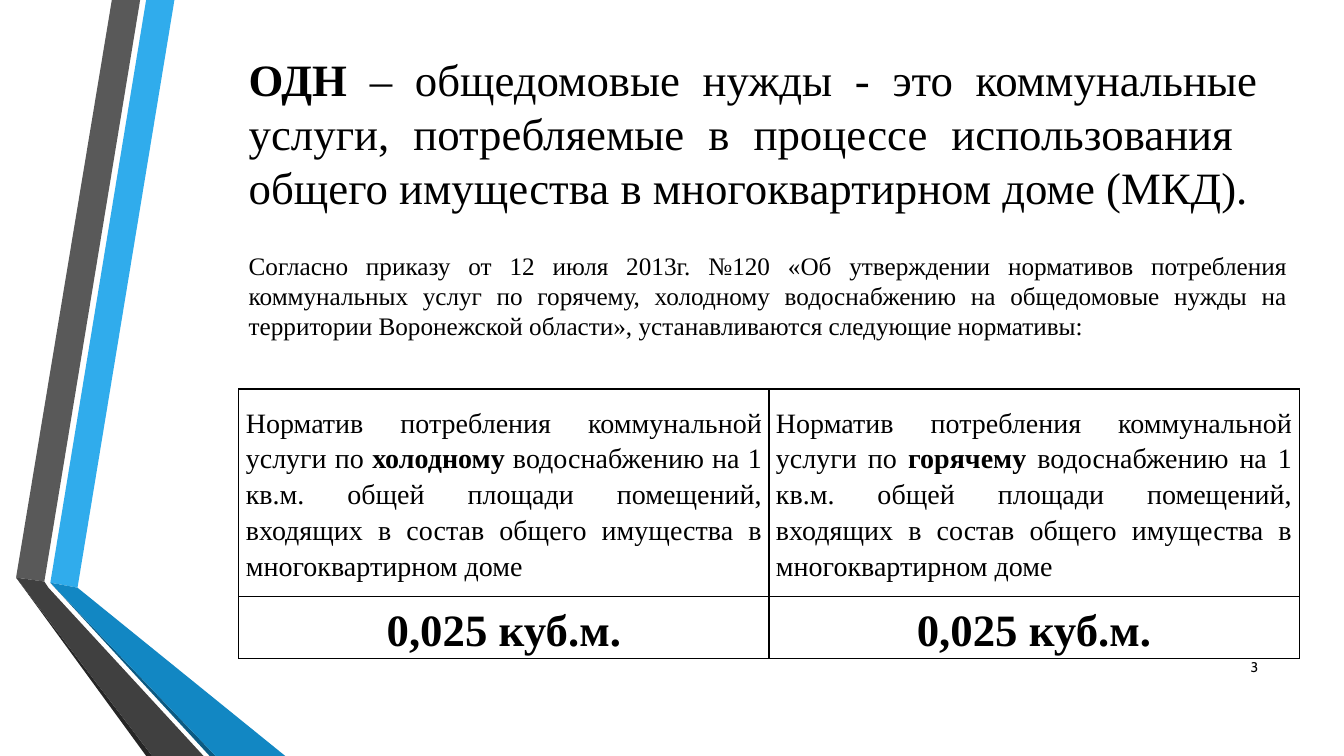
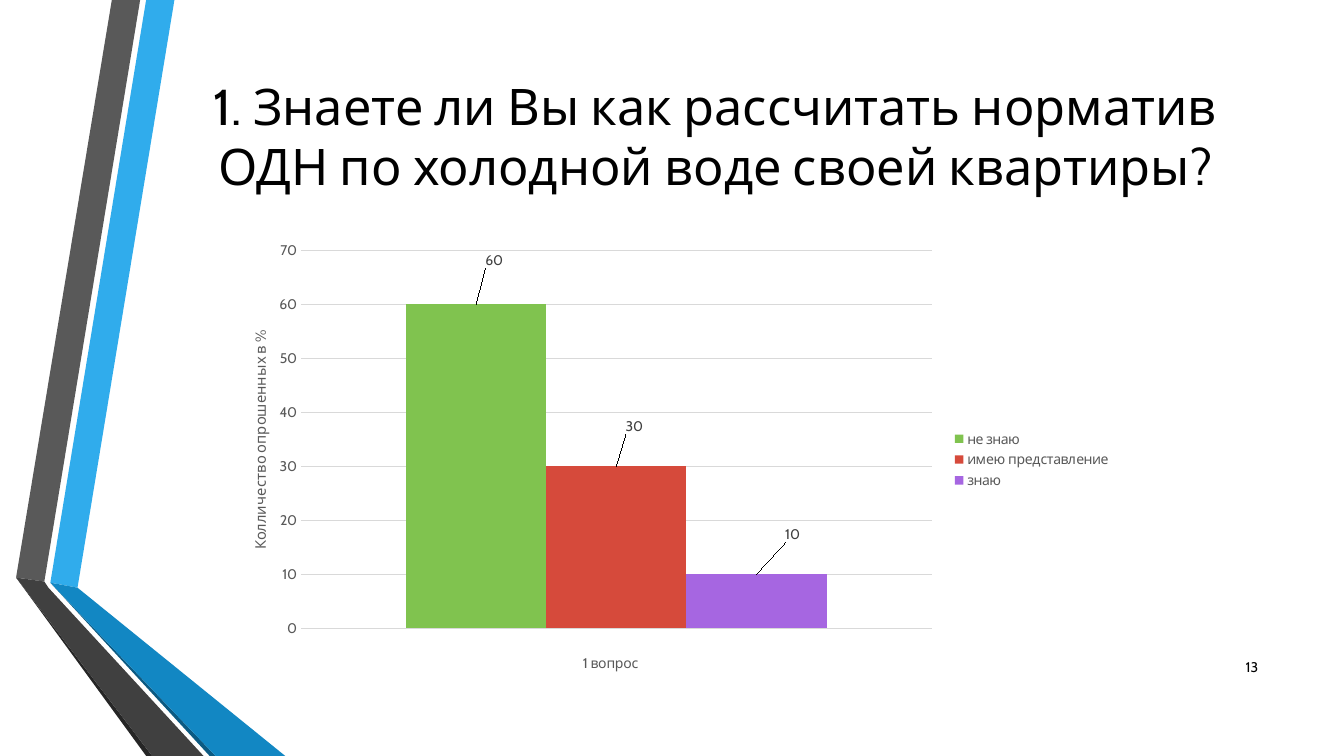
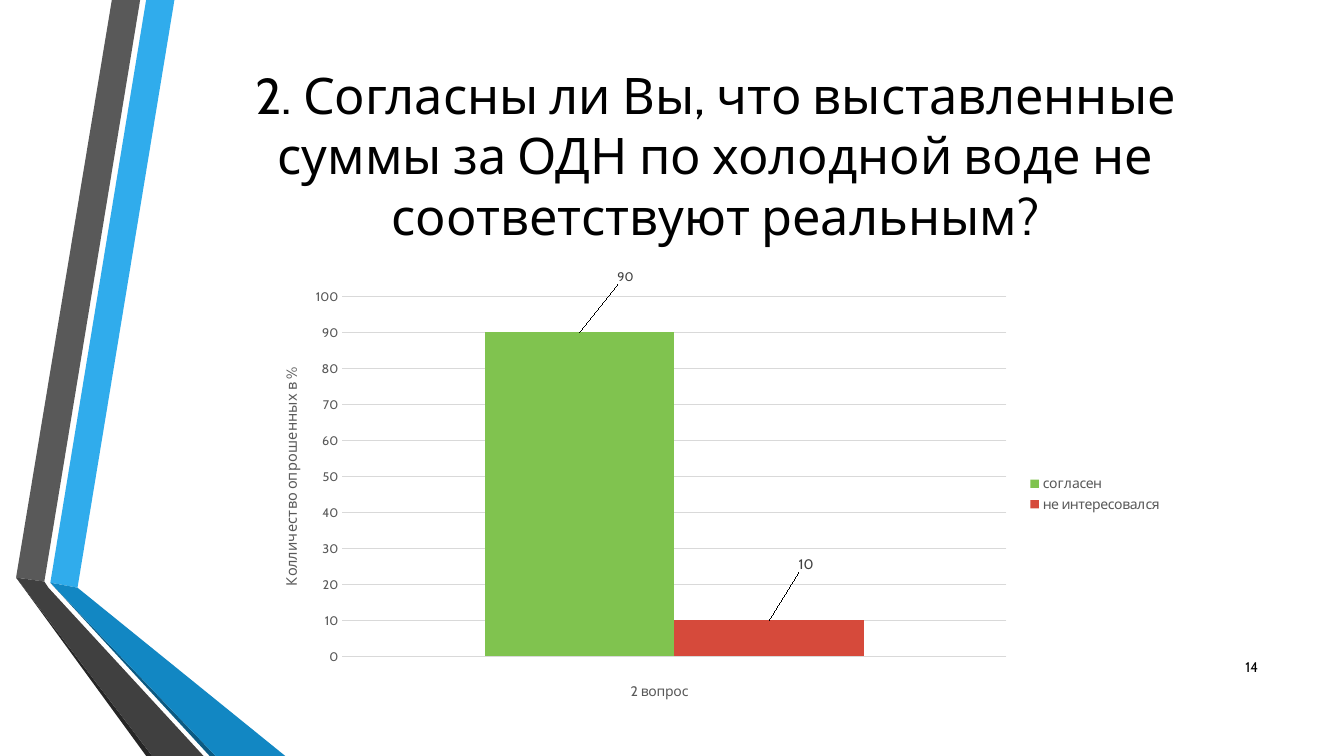
from dataclasses import dataclass

from lxml.etree import SubElement
from pptx import Presentation
from pptx.chart.data import CategoryChartData
from pptx.dml.color import RGBColor
from pptx.enum.chart import (XL_CHART_TYPE, XL_LABEL_POSITION,
                             XL_LEGEND_POSITION, XL_TICK_MARK)
from pptx.enum.text import MSO_ANCHOR, MSO_AUTO_SIZE, PP_ALIGN
from pptx.oxml import parse_xml
from pptx.oxml.ns import nsdecls, qn
from pptx.util import Pt


@dataclass(frozen=True)
class Theme:
    # Colours
    text: str = "000000"
    muted: str = "595959"
    label: str = "404040"
    grid: str = "D9D9D9"
    series: tuple = ("80C34F", "D64A3B", "A666E1")
    sky: str = "30ACEC"
    blue: str = "1287C3"
    navy: str = "0C5A82"
    grey: str = "595959"
    charcoal: str = "404040"
    black: str = "262626"
    # Fonts and type sizes
    sans: str = "Cabin"
    serif: str = "Times New Roman"
    title: float = 36
    lead: float = 32
    cell: float = 20
    body: float = 18
    axis_title: float = 10.5
    small: float = 10


T = Theme()
WIDTH, HEIGHT = 960, 540
TITLE_ONLY, BLANK = 5, 6


def rgb(value):
    return RGBColor.from_string(value)


def style(font, size, color=T.text, name=T.sans, bold=False):
    font.size, font.name, font.bold = Pt(size), name, bold
    font.color.rgb = rgb(color)


def write(tf, *runs, size, color=T.text, name=T.sans, align=PP_ALIGN.LEFT, spacing=None):
    """Fill one paragraph; a run is a string, or (string,) for bold."""
    p = tf.paragraphs[0]
    p.alignment = align
    if spacing is not None:
        p.line_spacing = spacing
    for run in runs:
        bold = isinstance(run, tuple)
        r = p.add_run()
        r.text = run[0] if bold else run
        style(r.font, size, color, name, bold)


def add_text(s, box, *runs, anchor=MSO_ANCHOR.TOP, **fmt):
    tf = s.shapes.add_textbox(*map(Pt, box)).text_frame
    tf.word_wrap = True
    tf.vertical_anchor = anchor
    write(tf, *runs, **fmt)


# Ribbons shared by all slides
def add_ribbons(prs, s):
    grey_fold, grey_edge = (11.5, 412.6), (31.7, 415.4)
    blue_fold, blue_edge = (36, 416.2), (55.4, 419.8)
    grey_foot, blue_foot = (108.7, HEIGHT), (154.1, HEIGHT)
    ribbons = [
        (T.sky, [blue_fold, blue_edge, (124.6, 0), (104.4, 0)]),
        (T.grey, [(100.1, 0), (79.9, 0), grey_fold, grey_edge]),
        (T.black, [grey_fold, (104.4, HEIGHT), grey_foot]),
        (T.navy, [blue_fold, (149.8, HEIGHT), blue_foot]),
        (T.blue, [blue_fold, blue_foot, (203.8, HEIGHT), blue_edge]),
        (T.charcoal, [(145.4, HEIGHT), (34.6, 419.8), grey_edge, grey_fold, grey_foot]),
    ]
    master_tree = prs.slide_master.shapes.element
    for i, (color, points) in enumerate(ribbons):
        start, *rest = [(Pt(x), Pt(y)) for x, y in points]
        builder = s.shapes.build_freeform(*start)
        builder.add_line_segments(rest, close=True)
        sp = builder.convert_to_shape()
        sp.shadow.inherit = False
        sp.fill.solid()
        sp.fill.fore_color.rgb = rgb(color)
        sp.line.fill.background()
        # Move to the master, behind its placeholders
        master_tree.insert(2 + i, sp.element)


def add_number(s, number):
    add_text(s, (862.6, 462.2, 43.2, 28.8), str(number), size=T.small,
             align=PP_ALIGN.RIGHT, anchor=MSO_ANCHOR.MIDDLE)


def add_title(s, box, text):
    sp = s.shapes.title
    sp.left, sp.top, sp.width, sp.height = map(Pt, box)
    tf = sp.text_frame
    tf.word_wrap = True
    tf.auto_size = MSO_AUTO_SIZE.NONE
    tf.vertical_anchor = MSO_ANCHOR.MIDDLE
    write(tf, text, size=T.title, align=PP_ALIGN.CENTER)


# Table
def add_borders(cell):
    tcPr = cell._tc.get_or_add_tcPr()
    for i, side in enumerate(("lnL", "lnR", "lnT", "lnB")):
        ln = parse_xml(
            f'<a:{side} {nsdecls("a")} w="{Pt(1)}"><a:solidFill>'
            f'<a:srgbClr val="{T.text}"/></a:solidFill></a:{side}>')
        tcPr.insert(i, ln)


def add_norms_table(s, box, row_heights, rows):
    table = s.shapes.add_table(len(rows), len(rows[0]), *map(Pt, box)).table
    table.first_row = table.horz_banding = False
    formats = [dict(size=T.cell, align=PP_ALIGN.JUSTIFY),
               dict(size=T.lead, align=PP_ALIGN.CENTER)]
    for i, (height, row, fmt) in enumerate(zip(row_heights, rows, formats)):
        table.rows[i].height = Pt(height)
        for j, runs in enumerate(row):
            cell = table.cell(i, j)
            cell.margin_left = cell.margin_right = Pt(5)
            cell.margin_top = cell.margin_bottom = 0
            cell.vertical_anchor = MSO_ANCHOR.MIDDLE
            cell.fill.background()
            add_borders(cell)
            write(cell.text_frame, *runs, name=T.serif, spacing=1.15, **fmt)


# Chart
def set_layout(parent, index, edge=True, inner=False, **place):
    """Place a chart part by fractions of the chart's size."""
    for old in parent.findall(qn("c:layout")):
        parent.remove(old)
    layout = parse_xml(f'<c:layout {nsdecls("c")}><c:manualLayout/></c:layout>')
    settings = {"layoutTarget": "inner"} if inner else {}
    if edge:
        settings |= {"xMode": "edge", "yMode": "edge"}
    for tag, val in (settings | place).items():
        SubElement(layout[0], qn("c:" + tag)).set("val", str(val))
    parent.insert(index, layout)


def add_survey_chart(s, box, caption, answers, top, axis_size, plot, value_at, caption_at):
    """answers: (name, value, label size, label shift)."""
    data = CategoryChartData()
    data.categories = ["1"]
    for name, value, *_ in answers:
        data.add_series(name, [value])
    chart = s.shapes.add_chart(
        XL_CHART_TYPE.COLUMN_CLUSTERED, *map(Pt, box), data).chart
    chart.has_title = False
    style(chart.font, T.small)
    chart.has_legend = True
    chart.legend.position = XL_LEGEND_POSITION.RIGHT
    chart.legend.include_in_layout = False
    style(chart.legend.font, T.small, T.muted)

    # Axes
    value_axis, category_axis = chart.value_axis, chart.category_axis
    category_axis.visible = False
    value_axis.minimum_scale, value_axis.maximum_scale = 0, top
    value_axis.major_unit = 10
    value_axis.major_tick_mark = value_axis.minor_tick_mark = XL_TICK_MARK.NONE
    value_axis.format.line.fill.background()
    grid = value_axis.major_gridlines.format.line
    grid.color.rgb, grid.width = rgb(T.grid), Pt(0.75)
    style(value_axis.tick_labels.font, axis_size, T.muted)
    titles = [(value_axis, "Колличество опрошенных в %", T.axis_title, value_at),
              (category_axis, caption, T.small, caption_at)]
    for axis, text, size, (x, y) in titles:
        axis.has_title = True
        write(axis.axis_title.text_frame, text, size=size, color=T.muted)
        set_layout(axis.axis_title.element, 1, x=x, y=y)
    for bodyPr in chart.element.xpath(".//c:valAx/c:title//a:bodyPr"):
        bodyPr.set("rot", "-5400000")
        bodyPr.set("vert", "horz")

    # Columns and their labels
    bars = chart.plots[0]
    bars.gap_width, bars.overlap, bars.vary_by_categories = 150, 0, False
    for series, color, (_, _, size, _) in zip(bars.series, T.series, answers):
        series.format.fill.solid()
        series.format.fill.fore_color.rgb = rgb(color)
        label = series.points[0].data_label
        style(label.font, size, T.label)
        label.position = XL_LABEL_POSITION.OUTSIDE_END
    for dLbl, (*_, (x, y)) in zip(chart.element.xpath(".//c:dLbl"), answers):
        set_layout(dLbl, 1, edge=False, x=x, y=y)
    x, y, w, h = plot
    set_layout(chart.element.xpath(".//c:plotArea")[0], 0, inner=True, x=x, y=y, w=w, h=h)


# Slides
def norms_slide(prs):
    s = prs.slides.add_slide(prs.slide_layouts[BLANK])
    add_ribbons(prs, s)
    left = 170.6
    fmt = dict(name=T.serif, align=PP_ALIGN.JUSTIFY)
    add_text(s, (left, 33.1, 735.1, 123.8), ("ОДН ",),
             "– общедомовые нужды - это коммунальные услуги, потребляемые в процессе "
             "использования  общего имущества в многоквартирном доме (МКД).",
             size=T.lead, spacing=Pt(38.6), **fmt)
    add_text(s, (left, 175.7, 756, 72.7),
             "Согласно приказу от 12 июля 2013г. №120 «Об утверждении нормативов "
             "потребления коммунальных услуг по горячему, холодному водоснабжению на "
             "общедомовые нужды на территории Воронежской области», устанавливаются "
             "следующие нормативы: ",
             size=T.body, spacing=Pt(21.4), **fmt)
    norms = [("Норматив потребления коммунальной услуги по ", (water,),
              " водоснабжению на 1 кв.м. общей площади помещений, входящих в состав "
              "общего имущества в многоквартирном доме")
             for water in ("холодному", "горячему")]
    heights = (148.3, 44)
    add_norms_table(s, (left, 277.9, 757.4, sum(heights)), heights,
                    [norms, [[("0,025 куб.м.",)]] * 2])
    add_number(s, 3)


def survey_slide(prs, number, title, title_box, **chart):
    s = prs.slides.add_slide(prs.slide_layouts[TITLE_ONLY])
    add_title(s, title_box, title)
    add_survey_chart(s, **chart)
    add_number(s, number)


def main():
    prs = Presentation()
    prs.slide_width, prs.slide_height = Pt(WIDTH), Pt(HEIGHT)
    norms_slide(prs)
    survey_slide(
        prs, 13, "1. Знаете ли Вы как рассчитать норматив ОДН по холодной воде своей квартиры?",
        (116.6, 27.4, 789.1, 138.2),
        box=(157, 165.6, 643.7, 325.4), caption="1 вопрос", top=70, axis_size=10,
        answers=[("не знаю", 60, 10, (0.02, -0.07)),
                 ("имею представление", 30, 10, (0.02, -0.06)),
                 ("знаю", 10, 10, (0.04, -0.06))],
        plot=(0.09, 0.04, 0.7, 0.83), value_at=(0.03, 0.21), caption_at=(0.4, 0.92))
    survey_slide(
        prs, 14, "2. Согласны ли Вы, что выставленные суммы за ОДН по холодной воде "
                 "не соответствуют реальным?",
        (116.6, 28.8, 789.1, 163.4),
        box=(178.6, 192.2, 658.8, 317.5), caption="2 вопрос", top=100, axis_size=9,
        answers=[("согласен", 90, 9, (0.05, -0.1)),
                 ("не интересовался", 10, 10, (0.04, -0.1))],
        plot=(0.1, 0.05, 0.72, 0.82), value_at=(0.03, 0.21), caption_at=(0.41, 0.92))
    prs.save("out.pptx")


if __name__ == "__main__":
    main()
